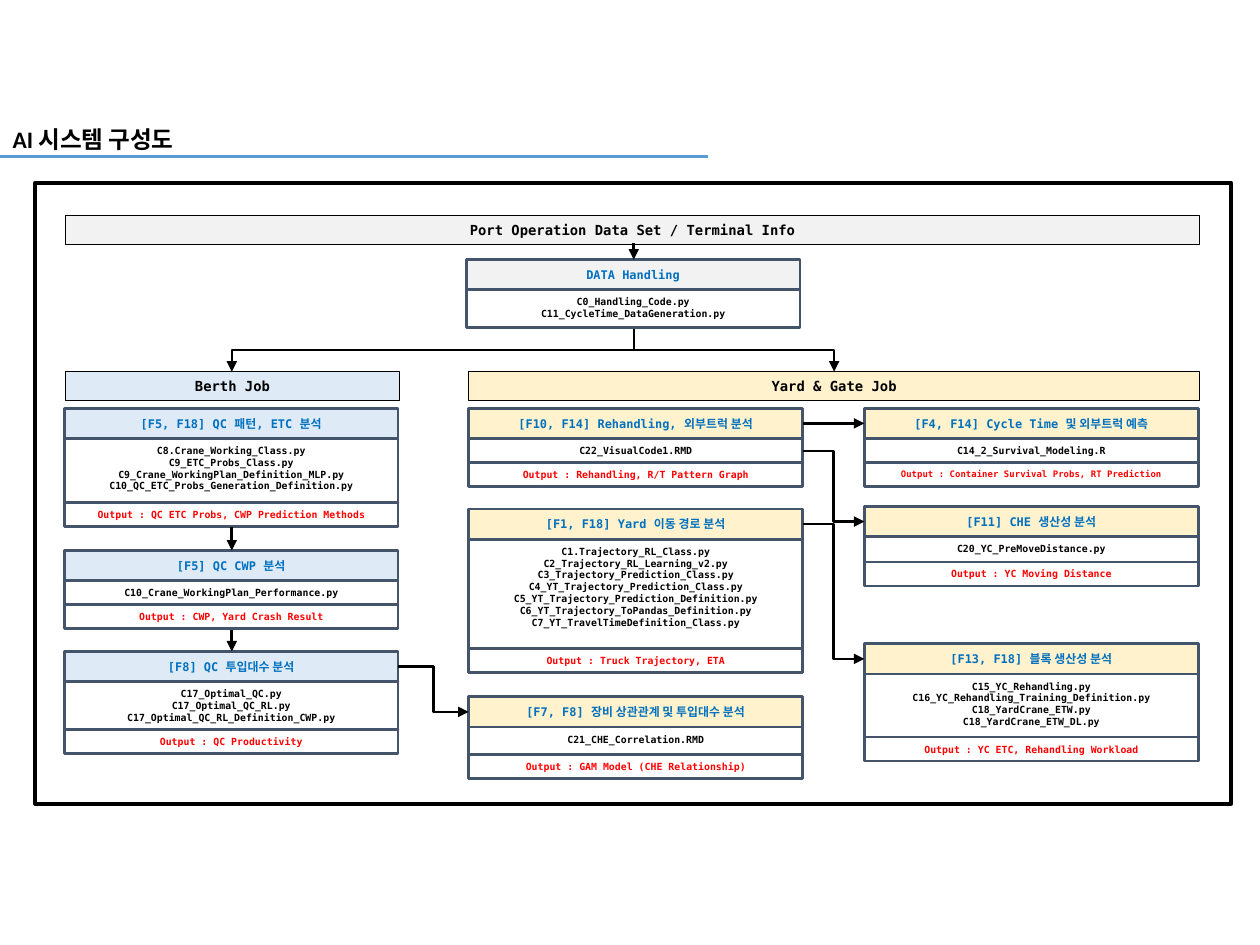
from lxml.etree import SubElement
from pptx import Presentation
from pptx.dml.color import RGBColor
from pptx.enum.shapes import MSO_CONNECTOR, MSO_SHAPE
from pptx.enum.text import MSO_ANCHOR, PP_ALIGN
from pptx.oxml.ns import qn
from pptx.util import Inches, Pt

MONO = "DejaVu Sans Mono"
BLACK, RED, BLUE, SLATE = "000000", "FF0000", "0070C0", "44546A"
GREY, SKY, CREAM = "F2F2F2", "DEEBF7", "FFF2CC"
CARD_WIDTH, HEADER_HEIGHT, OUTPUT_HEIGHT = 2.65, 0.24, 0.19
BERTH_LEFT, YARD_LEFT, GATE_LEFT = 0.51, 3.72, 6.86


def color(hex_string):
    """Turn a hex string into a colour."""
    return RGBColor.from_string(hex_string)


def style_text(paragraph, size, hex_string, name=MONO):
    """Give a paragraph its bold font."""
    font = paragraph.font
    font.name, font.size, font.bold = name, Pt(size), True
    font.color.rgb = color(hex_string)


def add_box(slide, box, lines=(), size=5.6, ink=BLACK, fill=None,
            edge=SLATE, weight=1.5, anchor=MSO_ANCHOR.TOP):
    """Draw a bordered rectangle with centred lines of text."""
    panel = slide.shapes.add_shape(MSO_SHAPE.RECTANGLE, *map(Inches, box))
    panel.shadow.inherit = False
    if fill:
        panel.fill.solid()
        panel.fill.fore_color.rgb = color(fill)
    else:
        panel.fill.background()
    panel.line.color.rgb = color(edge)
    panel.line.width = Pt(weight)
    frame = panel.text_frame
    frame.word_wrap = True
    frame.vertical_anchor = anchor
    frame.margin_top = frame.margin_bottom = Inches(0.05)
    for index, line in enumerate(lines):
        paragraph = frame.add_paragraph() if index else frame.paragraphs[0]
        paragraph.text = line
        paragraph.alignment = PP_ALIGN.CENTER
        style_text(paragraph, size, ink)


def add_band(slide, box, label, fill):
    """Draw a section band with its label."""
    add_box(slide, box, [label], 7.9, fill=fill, edge=BLACK, weight=0.25)


def add_card(slide, left, top, fill, heading, files, body_height,
             output=None, output_size=5.6):
    """Stack a heading, its code files and an optional output row."""
    body_top = top + HEADER_HEIGHT
    add_box(slide, (left, body_top, CARD_WIDTH, body_height), files)
    add_box(slide, (left, top, CARD_WIDTH, HEADER_HEIGHT), [heading], 6.8,
            BLUE, fill, anchor=MSO_ANCHOR.MIDDLE)
    if output:
        add_box(slide, (left, body_top + body_height, CARD_WIDTH, OUTPUT_HEIGHT),
                [f"Output : {output}"], output_size, RED)


def add_line(slide, start, end, kind=MSO_CONNECTOR.STRAIGHT, weight=1.5,
             ink=BLACK, arrow=True):
    """Draw a connector, with an arrowhead at its end if wanted."""
    connector = slide.shapes.add_connector(kind, *map(Inches, (*start, *end)))
    connector.line.color.rgb = color(ink)
    connector.line.width = Pt(weight)
    if arrow:
        SubElement(connector.line._get_or_add_ln(), qn("a:tailEnd"), type="triangle")
    SubElement(connector._element.spPr, qn("a:effectLst"))
    return connector


def add_branch(slide, start, end):
    """Draw an elbow that leaves downward, runs sideways and ends downward."""
    (x1, y1), (x2, y2) = start, end
    middle_x, middle_y = (x1 + x2) / 2, (y1 + y2) / 2
    half_drop, half_run = (y2 - y1) / 2, abs(x2 - x1) / 2
    side = 1 if x2 > x1 else -1
    branch = add_line(
        slide,
        (middle_x + side * half_drop, middle_y - half_run),
        (middle_x - side * half_drop, middle_y + half_run),
        MSO_CONNECTOR.ELBOW, 1)
    angle = 270 if side > 0 else 90
    branch._element.spPr.find(qn("a:xfrm")).set("rot", str(angle * 60000))


def add_title(slide, box):
    """Place the title and the rule below it."""
    left, top, width, height = box
    title = slide.shapes.title
    title.left, title.top, title.width, title.height = map(Inches, box)
    frame = title.text_frame
    frame.text = "AI 시스템 구성도"
    frame.word_wrap = False
    frame.vertical_anchor = MSO_ANCHOR.MIDDLE
    frame.paragraphs[0].alignment = PP_ALIGN.LEFT
    style_text(frame.paragraphs[0], 13.5, BLACK, "Calibri")
    rule_y = top + 0.3
    add_line(slide, (left, rule_y), (left + 5.62, rule_y), ink="5B9BD5", arrow=False)


def add_data_source(slide, left, top):
    """Draw the data set band and the handling card it feeds."""
    add_band(slide, (left, top, 9, 0.23), "Port Operation Data Set / Terminal Info", GREY)
    add_card(slide, left + 3.18, top + 0.35, GREY, "DATA Handling",
             ["C0_Handling_Code.py", "C11_CycleTime_DataGeneration.py"], 0.3)
    center = left + 4.51
    add_line(slide, (center, top + 0.22), (center, top + 0.35))
    for target in (1.84, 6.62):
        add_branch(slide, (center, top + 0.9), (target, 2.95))


def add_berth_job(slide, left, top):
    """Draw the berth column from its band to the last card."""
    add_band(slide, (left + 0.01, top, CARD_WIDTH, 0.23), "Berth Job", SKY)
    cards = [
        (0.29, "[F5, F18] QC 패턴, ETC 분석",
         ["C8.Crane_Working_Class.py", "C9_ETC_Probs_Class.py",
          "C9_Crane_WorkingPlan_Definition_MLP.py",
          "C10_QC_ETC_Probs_Generation_Definition.py"], 0.51,
         "QC ETC Probs, CWP Prediction Methods"),
        (1.42, "[F5] QC CWP 분석", ["C10_Crane_WorkingPlan_Performance.py"], 0.19,
         "CWP, Yard Crash Result"),
        (2.22, "[F8] QC 투입대수 분석",
         ["C17_Optimal_QC.py", "C17_Optimal_QC_RL.py",
          "C17_Optimal_QC_RL_Definition_CWP.py"], 0.38, "QC Productivity"),
    ]
    for offset, *content in cards:
        add_card(slide, left, top + offset, SKY, *content)
    center = left + 1.33
    for start, end in ((1.23, 1.42), (2.05, 2.22)):
        add_line(slide, (center, top + start), (center, top + end))


def add_yard_gate_job(slide, left, top):
    """Draw the yard and gate band with its two columns of cards."""
    add_band(slide, (left, top, 5.8, 0.23), "Yard & Gate Job", CREAM)
    cards = [
        (YARD_LEFT, 0.29, "[F10, F14] Rehandling, 외부트럭 분석",
         ["C22_VisualCode1.RMD"], 0.19, "Rehandling, R/T Pattern Graph"),
        (GATE_LEFT, 0.29, "[F4, F14] Cycle Time 및 외부트럭 예측",
         ["C14_2_Survival_Modeling.R"], 0.19,
         "Container Survival Probs, RT Prediction", 5.1),
        (GATE_LEFT, 1.07, "[F11] CHE 생산성 분석",
         ["C20_YC_PreMoveDistance.py"], 0.2, "YC Moving Distance"),
        (YARD_LEFT, 1.09, "[F1, F18] Yard 이동 경로 분석",
         ["C1.Trajectory_RL_Class.py", "C2_Trajectory_RL_Learning_v2.py",
          "C3_Trajectory_Prediction_Class.py",
          "C4_YT_Trajectory_Prediction_Class.py",
          "C5_YT_Trajectory_Prediction_Definition.py",
          "C6_YT_Trajectory_ToPandas_Definition.py",
          "C7_YT_TravelTimeDefinition_Class.py"], 0.87, "Truck Trajectory, ETA"),
        (GATE_LEFT, 2.16, "[F13, F18] 블록 생산성 분석",
         ["C15_YC_Rehandling.py", "C16_YC_Rehandling_Training_Definition.py",
          "C18_YardCrane_ETW.py", "C18_YardCrane_ETW_DL.py"], 0.5,
         "YC ETC, Rehandling Workload"),
        (YARD_LEFT, 2.58, "[F7, F8] 장비 상관관계 및 투입대수 분석",
         ["C21_CHE_Correlation.RMD"], 0.22, "GAM Model (CHE Relationship)"),
    ]
    for card_left, offset, *content in cards:
        add_card(slide, card_left, top + offset, CREAM, *content)
    yard_right = YARD_LEFT + CARD_WIDTH
    add_line(slide, (yard_right, top + 0.41), (GATE_LEFT, top + 0.41))
    for start, end in ((0.63, 1.19), (1.21, 2.28)):
        add_line(slide, (yard_right, top + start), (GATE_LEFT, top + end),
                 MSO_CONNECTOR.ELBOW)


def main():
    """Build the system diagram slide and save it."""
    deck = Presentation()
    deck.slide_width, deck.slide_height = Inches(10), Inches(7.5)
    slide = deck.slides.add_slide(deck.slide_layouts[5])
    add_box(slide, (0.28, 1.45, 9.49, 4.93), edge=BLACK, weight=2.25)
    add_data_source(slide, 0.52, 1.71)
    add_berth_job(slide, BERTH_LEFT, 2.95)
    add_yard_gate_job(slide, YARD_LEFT, 2.95)
    add_line(slide, (BERTH_LEFT + CARD_WIDTH, 5.29), (YARD_LEFT, 5.65),
             MSO_CONNECTOR.ELBOW)
    add_title(slide, (0, 0.94, 1.59, 0.33))
    deck.save("out.pptx")


if __name__ == "__main__":
    main()
